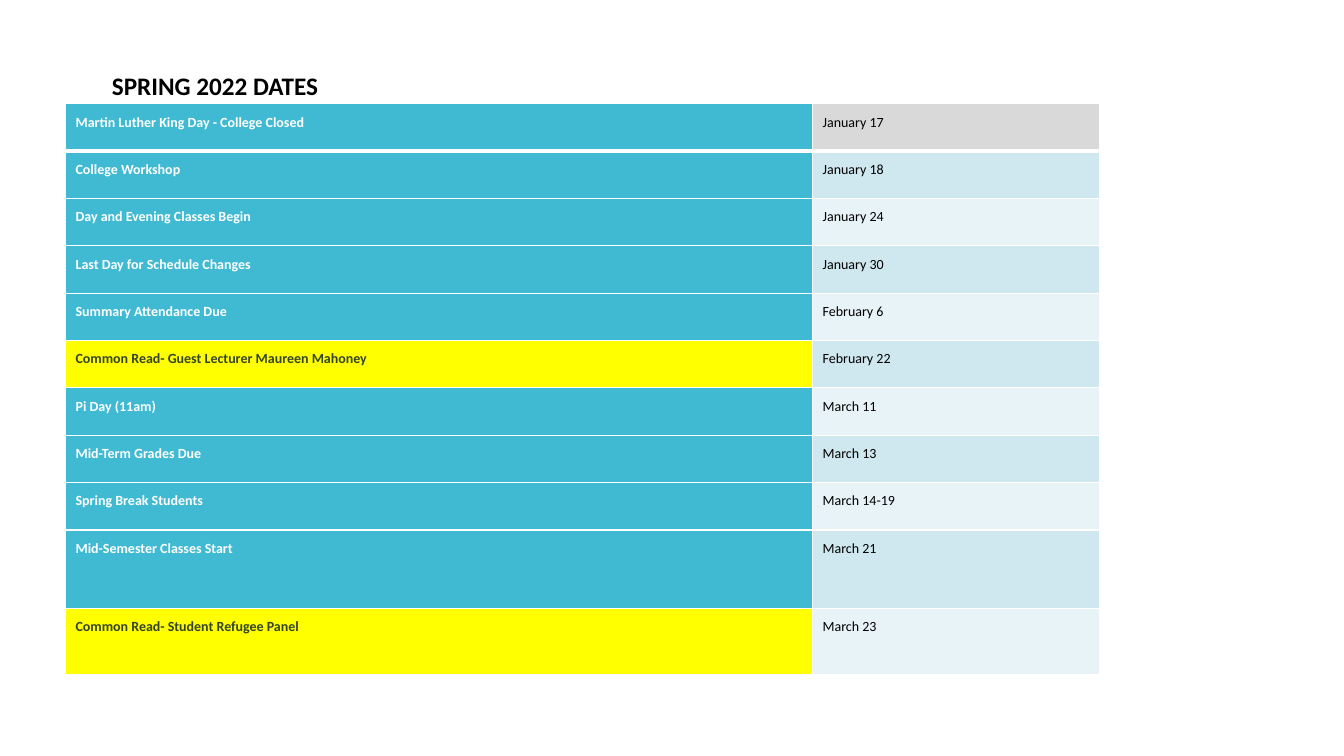
from typing import NamedTuple

from lxml import etree
from pptx import Presentation
from pptx import util as u
from pptx.dml import color
from pptx.enum import text
from pptx.oxml import ns

COLORS = {
    "white": "FFFFFF",
    "black": "000000",
    "teal": "40BAD2",
    "yellow": "FFFF00",
    "olive": "344529",
    "gray": "D9D9D9",
    "pale": "E8F3F7",
    "blue": "CFE7EE",
}
SLIDE_WIDTH, SLIDE_HEIGHT = u.Inches(13.33), u.Inches(7.5)
ROW = 0.47 / 7.5
COLUMNS = (7.41 / 13.33, 2.85 / 13.33)
INSETS = ("margin_left", "margin_top", "margin_right", "margin_bottom")
SIDES = ("lnL", "lnR", "lnT", "lnB")


class Event(NamedTuple):
    name: str
    date: str
    common_read: bool = False
    height: float = ROW


EVENTS = [
    Event("Martin Luther King Day - College Closed", "January 17"),
    Event("College Workshop", "January 18"),
    Event("Day and Evening Classes Begin", "January 24"),
    Event("Last Day for Schedule Changes", "January 30"),
    Event("Summary Attendance Due", "February 6"),
    Event("Common Read- Guest Lecturer Maureen Mahoney", "February 22", True),
    Event("Pi Day (11am)", "March 11"),
    Event("Mid-Term Grades Due", "March 13"),
    Event("Spring Break Students", "March 14-19"),
    Event("Mid-Semester Classes Start", "March 21", height=0.78 / 7.5),
    Event("Common Read- Student Refugee Panel", "March 23", True, 0.66 / 7.5),
]


def across(share: float) -> int:
    return round(SLIDE_WIDTH * share)


def down(share: float) -> int:
    return round(SLIDE_HEIGHT * share)


def apply(target, formats: dict) -> None:
    for attribute, value in formats.items():
        setattr(target, attribute, value)


def write(frame, words: str, size: int, hue: str, bold: bool):
    paragraph = frame.paragraphs[0]
    paragraph.alignment = text.PP_ALIGN.LEFT
    run = paragraph.add_run()
    run.text = words
    apply(run.font, {"name": "Calibri", "size": u.Pt(size), "bold": bold})
    run.font.color.rgb = color.RGBColor.from_string(COLORS[hue])
    return paragraph


def draw_borders(cell, bottom: float, top: float) -> None:
    properties = cell._tc.get_or_add_tcPr()
    widths = {"lnB": bottom, "lnT": top}
    for position, side in enumerate(SIDES):
        border = etree.Element(ns.qn(f"a:{side}"), w=str(u.Pt(widths.get(side, 1))))
        fill = etree.SubElement(border, ns.qn("a:solidFill"))
        etree.SubElement(fill, ns.qn("a:srgbClr"), val=COLORS["white"])
        properties.insert(position, border)


def fill_cell(cell, words: str, fill: str, hue: str, bold: bool, row: int) -> None:
    apply(cell, dict.fromkeys(INSETS, u.Inches(0.1)))
    cell.fill.solid()
    cell.fill.fore_color.rgb = color.RGBColor.from_string(COLORS[fill])
    paragraph = write(cell.text_frame, words, 10, hue, bold)
    if row == 0:
        paragraph.space_after = u.Pt(22.5)
    draw_borders(cell, 3 if row == 0 else 1, 3 if row == 1 else 1)


def add_heading(slide) -> None:
    heading = slide.shapes.title
    apply(heading, {"left": across(1.01 / 13.33), "top": down(0.65 / 7.5),
                    "width": across(3 / 13.33), "height": down(0.4 / 7.5)})
    apply(heading.text_frame, {"word_wrap": True,
                               "auto_size": text.MSO_AUTO_SIZE.NONE,
                               "vertical_anchor": text.MSO_ANCHOR.TOP})
    write(heading.text_frame, "SPRING 2022 DATES", 18, "black", True)


def add_calendar(slide) -> None:
    calendar = slide.shapes.add_table(
        len(EVENTS), len(COLUMNS), across(0.65 / 13.33), down(1.03 / 7.5),
        across(sum(COLUMNS)), down(sum(event.height for event in EVENTS))).table
    apply(calendar, {"first_row": False, "horz_banding": False})
    for column, share in zip(calendar.columns, COLUMNS):
        column.width = across(share)
    for row, event in enumerate(EVENTS):
        calendar.rows[row].height = down(event.height)
        name_fill, name_hue = ("yellow", "olive") if event.common_read else ("teal", "white")
        date_fill = "gray" if row == 0 else ("pale", "blue")[row % 2]
        fill_cell(calendar.cell(row, 0), event.name, name_fill, name_hue, True, row)
        fill_cell(calendar.cell(row, 1), event.date, date_fill, "black", False, row)


def main() -> None:
    deck = Presentation()
    apply(deck, {"slide_width": SLIDE_WIDTH, "slide_height": SLIDE_HEIGHT})
    slide = deck.slides.add_slide(deck.slide_layouts.get_by_name("Title Only"))
    add_heading(slide)
    add_calendar(slide)
    deck.save("out.pptx")


if __name__ == "__main__":
    main()
